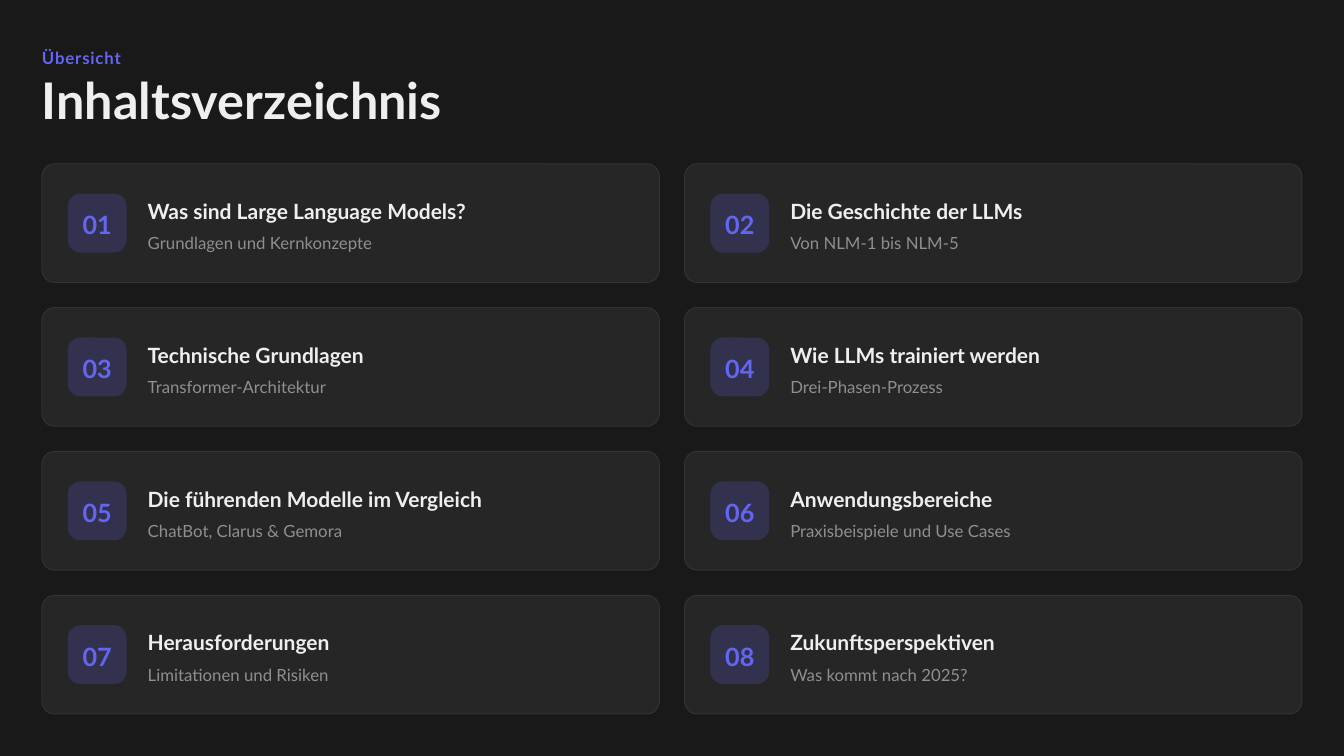
from lxml import etree
from pptx import Presentation
from pptx.dml.color import RGBColor
from pptx.enum.shapes import MSO_SHAPE
from pptx.enum.text import MSO_ANCHOR, MSO_AUTO_SIZE, PP_ALIGN
from pptx.oxml.ns import qn
from pptx.util import Pt

KICKER = "Übersicht"
TITLE = "Inhaltsverzeichnis"
CHAPTERS = [
    ("01", "Was sind Large Language Models?", "Grundlagen und Kernkonzepte"),
    ("02", "Die Geschichte der LLMs", "Von NLM-1 bis NLM-5"),
    ("03", "Technische Grundlagen", "Transformer-Architektur"),
    ("04", "Wie LLMs trainiert werden", "Drei-Phasen-Prozess"),
    ("05", "Die führenden Modelle im Vergleich", "ChatBot, Clarus & Gemora"),
    ("06", "Anwendungsbereiche", "Praxisbeispiele und Use Cases"),
    ("07", "Herausforderungen", "Limitationen und Risiken"),
    ("08", "Zukunftsperspektiven", "Was kommt nach 2025?"),
]

BACKGROUND = RGBColor(0x19, 0x19, 0x19)
CARD_FILL = RGBColor(0x26, 0x26, 0x26)
CARD_LINE = RGBColor(0x33, 0x33, 0x33)
ACCENT = RGBColor(0x63, 0x66, 0xF1)
BRIGHT = RGBColor(0xEF, 0xEF, 0xEF)
MUTED = RGBColor(0x8F, 0x8F, 0x8F)

ROUNDED = MSO_SHAPE.ROUNDED_RECTANGLE
MIDDLE = MSO_ANCHOR.MIDDLE
NO_AUTOFIT = MSO_AUTO_SIZE.NONE
LEFT, CENTER = PP_ALIGN.LEFT, PP_ALIGN.CENTER

FONT = "Lato"
KICKER_STYLE = {"size": Pt(12), "bold": True, "color": ACCENT, "spacing": 1.3}
TITLE_STYLE = {"size": Pt(36), "bold": True, "color": BRIGHT, "spacing": 0.8}
NUMBER_STYLE = {"size": Pt(18), "bold": True, "color": ACCENT, "spacing": 1.1}
HEADING_STYLE = {"size": Pt(15), "bold": True, "color": BRIGHT, "spacing": 1.2}
DETAIL_STYLE = {"size": Pt(12), "bold": False, "color": MUTED, "spacing": 1.3}

PAGE_WIDTH, PAGE_HEIGHT = 960, 540
MARGIN = 30
COLUMNS, ROWS = 2, 4
GAP = 18
GRID_TOP = 117
CARD_WIDTH = (PAGE_WIDTH - 2 * MARGIN - (COLUMNS - 1) * GAP) / COLUMNS
CARD_HEIGHT = (PAGE_HEIGHT - MARGIN - GRID_TOP - (ROWS - 1) * GAP) / ROWS
RADIUS = 9
BADGE_SIZE = 42
BADGE_INSET = 18.5
TEXT_INSET = 75.5
TEXT_WIDTH = CARD_WIDTH - TEXT_INSET - GAP
HEADING_HEIGHT, DETAIL_HEIGHT = 21, 18


def write(shape, text, style, align=LEFT):
    frame = shape.text_frame
    frame_format = {
        "margin_left": 0, "margin_top": 0, "margin_right": 0, "margin_bottom": 0,
        "word_wrap": True, "auto_size": NO_AUTOFIT, "vertical_anchor": MIDDLE,
    }
    for name, value in frame_format.items():
        setattr(frame, name, value)
    para = frame.paragraphs[0]
    para.alignment = align
    para.line_spacing = style["spacing"]
    span = para.add_run()
    span.text = text
    span.font.name = FONT
    span.font.color.rgb = style["color"]
    for name in ("size", "bold"):
        setattr(span.font, name, style[name])
    return span


def add_text(page, area, text, style):
    box = page.shapes.add_textbox(*map(Pt, area))
    return write(box, text, style)


def add_panel(page, area, fill):
    panel = page.shapes.add_shape(ROUNDED, *map(Pt, area))
    panel.adjustments[0] = RADIUS / min(area[2:])
    panel.shadow.inherit = False
    panel.fill.solid()
    panel.fill.fore_color.rgb = fill
    return panel


def add_card(page, left, top, chapter):
    number, heading, detail = chapter
    card = add_panel(page, (left, top, CARD_WIDTH, CARD_HEIGHT), CARD_FILL)
    card.line.color.rgb = CARD_LINE
    card.line.width = Pt(0.67)

    inner_top = top + (CARD_HEIGHT - BADGE_SIZE) / 2
    badge_area = (left + BADGE_INSET, inner_top, BADGE_SIZE, BADGE_SIZE)
    badge = add_panel(page, badge_area, ACCENT)
    badge.line.fill.background()
    badge_color = badge.element.spPr.find(qn("a:solidFill"))[0]
    etree.SubElement(badge_color, qn("a:alpha")).set("val", "20000")
    write(badge, number, NUMBER_STYLE, CENTER)

    text_left = left + TEXT_INSET
    detail_top = inner_top + BADGE_SIZE - DETAIL_HEIGHT
    add_text(page, (text_left, inner_top, TEXT_WIDTH, HEADING_HEIGHT), heading, HEADING_STYLE)
    add_text(page, (text_left, detail_top, TEXT_WIDTH, DETAIL_HEIGHT), detail, DETAIL_STYLE)


def main():
    deck = Presentation()
    deck.slide_width, deck.slide_height = Pt(PAGE_WIDTH), Pt(PAGE_HEIGHT)
    page = deck.slides.add_slide(deck.slide_layouts[5])
    page.background.fill.solid()
    page.background.fill.fore_color.rgb = BACKGROUND

    kicker = add_text(page, (MARGIN, 30, 900, 18), KICKER, KICKER_STYLE)
    kicker.font.element.set("spc", "60") if hasattr(kicker.font, "element") else kicker._r.get_or_add_rPr().set("spc", "60")

    title = page.shapes.title
    title.left, title.top, title.width, title.height = map(Pt, (MARGIN, 57, 900, 36))
    write(title, TITLE, TITLE_STYLE)

    for index, chapter in enumerate(CHAPTERS):
        row, column = divmod(index, COLUMNS)
        left = MARGIN + column * (CARD_WIDTH + GAP)
        top = GRID_TOP + row * (CARD_HEIGHT + GAP)
        add_card(page, left, top, chapter)

    deck.save("out.pptx")


if __name__ == "__main__":
    main()
